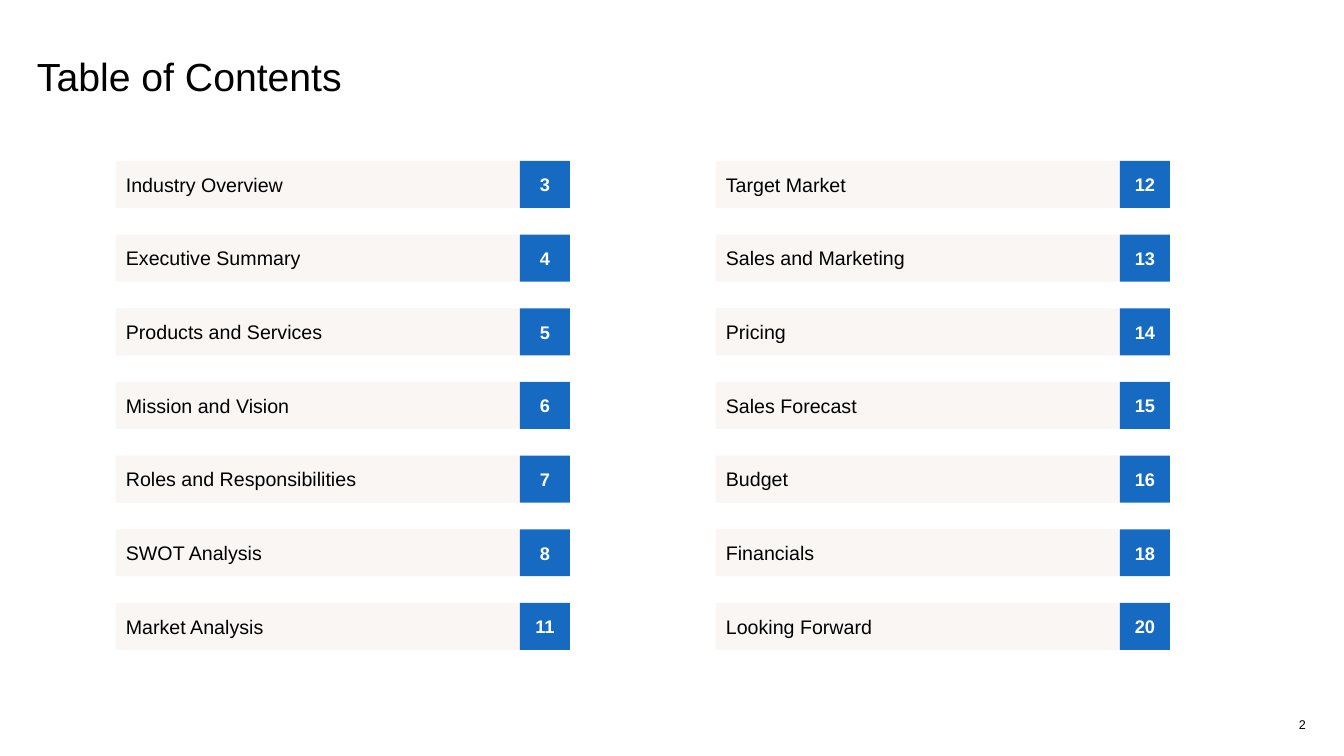
from dataclasses import dataclass

from pptx import Presentation
from pptx import util as u
from pptx.dml.color import RGBColor
from pptx.enum import shapes, text


@dataclass(frozen=True)
class Theme:
    font: str = "Arial"
    ink: str = "000000"
    band: str = "F9F6F4"
    accent: str = "166AC2"
    on_accent: str = "FFFFFF"
    title_size: int = 28
    topic_size: int = 14
    badge_size: int = 13
    footer_size: int = 9


THEME = Theme()
PX_PER_INCH = 100.8
BADGE_WIDTH = 50
ROW_HEIGHT = 47

LEFT_TOPICS = [
    ("Industry Overview", 3),
    ("Executive Summary", 4),
    ("Products and Services", 5),
    ("Mission and Vision", 6),
    ("Roles and Responsibilities", 7),
    ("SWOT Analysis", 8),
    ("Market Analysis", 11),
]
RIGHT_TOPICS = [
    ("Target Market", 12),
    ("Sales and Marketing", 13),
    ("Pricing", 14),
    ("Sales Forecast", 15),
    ("Budget", 16),
    ("Financials", 18),
    ("Looking Forward", 20),
]


def px(length):
    return u.Inches(length / PX_PER_INCH)


def write(frame, words, size, color, align, bold=False):
    frame.word_wrap = True
    frame.text = words
    paragraph = frame.paragraphs[0]
    paragraph.alignment = align
    paragraph.font.name = THEME.font
    paragraph.font.size = u.Pt(size)
    paragraph.font.bold = bold
    paragraph.font.color.rgb = RGBColor.from_string(color)


def clear_margins(frame):
    frame.margin_left = frame.margin_top = 0
    frame.margin_right = frame.margin_bottom = 0


def add_block(slide, box, fill):
    block = slide.shapes.add_shape(shapes.MSO_SHAPE.RECTANGLE, *map(px, box))
    block.shadow.inherit = False
    block.fill.solid()
    block.fill.fore_color.rgb = RGBColor.from_string(fill)
    block.line.fill.background()
    block.text_frame.vertical_anchor = text.MSO_ANCHOR.MIDDLE
    return block.text_frame


def add_heading(slide, box, words):
    heading = slide.shapes.title
    heading.left, heading.top, heading.width, heading.height = map(px, box)
    frame = heading.text_frame
    clear_margins(frame)
    frame.auto_size = text.MSO_AUTO_SIZE.NONE
    frame.vertical_anchor = text.MSO_ANCHOR.MIDDLE
    write(frame, words, THEME.title_size, THEME.ink, text.PP_ALIGN.LEFT)


def add_topic_column(slide, box, topics):
    left, top, width, height = box
    topic_width = width - BADGE_WIDTH
    pitch = (height - ROW_HEIGHT) / (len(topics) - 1)
    for row, (topic, page) in enumerate(topics):
        y = top + row * pitch
        band = add_block(slide, (left, y, topic_width, ROW_HEIGHT), THEME.band)
        write(band, topic, THEME.topic_size, THEME.ink, text.PP_ALIGN.LEFT)
        badge = add_block(
            slide, (left + topic_width, y, BADGE_WIDTH, ROW_HEIGHT), THEME.accent
        )
        write(badge, str(page), THEME.badge_size, THEME.on_accent,
              text.PP_ALIGN.CENTER, bold=True)


def add_page_number(slide, box, number):
    frame = slide.shapes.add_textbox(*map(px, box)).text_frame
    clear_margins(frame)
    write(frame, str(number), THEME.footer_size, THEME.ink, text.PP_ALIGN.RIGHT)


def add_contents_slide(deck):
    slide = deck.slides.add_slide(deck.slide_layouts[5])
    add_heading(slide, (37, 52, 1210, 47), "Table of Contents")
    add_topic_column(slide, (116, 161, 454, 489), LEFT_TOPICS)
    add_topic_column(slide, (716, 161, 454, 489), RIGHT_TOPICS)
    add_page_number(slide, (1283, 717, 23, 13), 2)


def main():
    deck = Presentation()
    deck.slide_width, deck.slide_height = px(1344), px(756)
    add_contents_slide(deck)
    deck.save("out.pptx")


if __name__ == "__main__":
    main()
